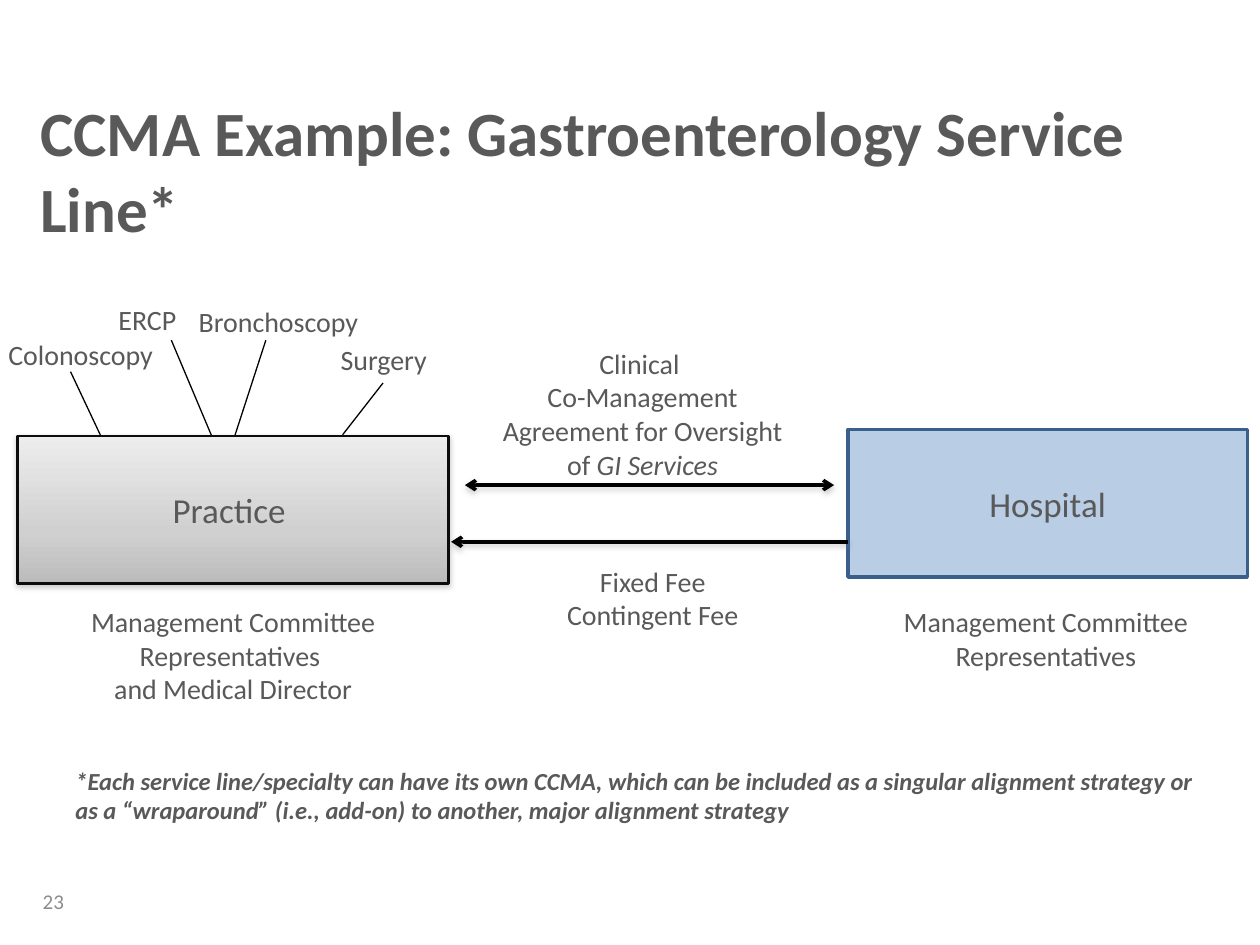
from copy import deepcopy

from lxml import etree
from pptx import Presentation
from pptx.dml.color import RGBColor
from pptx.enum.shapes import MSO_CONNECTOR, MSO_SHAPE
from pptx.enum.text import MSO_ANCHOR, MSO_AUTO_SIZE, PP_ALIGN
from pptx.oxml.ns import qn
from pptx.util import Inches, Pt

LEFT, CENTER = PP_ALIGN.LEFT, PP_ALIGN.CENTER
TOP, MIDDLE = MSO_ANCHOR.TOP, MSO_ANCHOR.MIDDLE
RECTANGLE = MSO_SHAPE.RECTANGLE
STRAIGHT = MSO_CONNECTOR.STRAIGHT
NO_AUTOFIT = MSO_AUTO_SIZE.NONE

FONT = "Calibri"
TEXT_GRAY = "595959"
BLACK = "000000"

# Service: label box (left, top, width), line start, line end
SERVICES = {
    "Colonoscopy": ((-0.2, 2.63, 1.68), (0.56, 2.95), (0.8, 3.46)),
    "ERCP": ((0.38, 2.35, 1.58), (1.36, 2.7), (1.68, 3.46)),
    "Bronchoscopy": ((1.42, 2.37, 1.58), (2.11, 2.7), (1.85, 3.5)),
    "Surgery": ((2.17, 2.67, 1.75), (3.04, 3.04), (2.72, 3.45)),
}


def rgb(hex_color):
    return RGBColor.from_string(hex_color)


def write_text(frame, paragraphs, size=16, color=TEXT_GRAY, align=CENTER,
               anchor=TOP, bold=False, italic=False):
    """Fill a frame; each paragraph is a string or a list of (text, italic) runs."""
    frame.word_wrap = True
    frame.auto_size = NO_AUTOFIT
    frame.vertical_anchor = anchor
    for index, content in enumerate(paragraphs):
        paragraph = frame.paragraphs[0] if index == 0 else frame.add_paragraph()
        paragraph.alignment = align
        runs = [(content, italic)] if isinstance(content, str) else content
        for words, slanted in runs:
            run = paragraph.add_run()
            run.text = words
            run.font.name = FONT
            run.font.size = Pt(size)
            run.font.bold = bold
            run.font.italic = slanted
            run.font.color.rgb = rgb(color)


def add_text(slide, box, *paragraphs, **text_format):
    label = slide.shapes.add_textbox(*map(Inches, box))
    write_text(label.text_frame, paragraphs, **text_format)


def set_effects(shape, shadow):
    """Replace the theme shadow with a soft downward one, or with none."""
    properties = shape._element.spPr
    for old in properties.findall(qn("a:effectLst")):
        properties.remove(old)
    effects = etree.SubElement(properties, qn("a:effectLst"))
    if shadow:
        outer = etree.SubElement(effects, qn("a:outerShdw"), blurRad=str(Pt(3.1)),
                                 dist=str(Pt(1.6)), dir="5400000", rotWithShape="0")
        tint = etree.SubElement(outer, qn("a:srgbClr"), val="808080")
        etree.SubElement(tint, qn("a:alpha"), val="38000")


def add_line(slide, start, end, width=0.75, arrows=(), shadow=False):
    """Draw a line; arrows may hold headEnd (at start) and tailEnd (at end)."""
    line = slide.shapes.add_connector(STRAIGHT, *map(Inches, (*start, *end)))
    line.line.color.rgb = rgb(BLACK)
    line.line.width = Pt(width)
    for arrow in arrows:
        etree.SubElement(line.line._get_or_add_ln(), qn(f"a:{arrow}"), type="arrow")
    set_effects(line, shadow)


def fill_gradient(shape, colors):
    """Fill top to bottom with three colours, the middle one at 65 %."""
    fill = shape.fill
    fill.gradient()
    fill.gradient_angle = 270
    first = fill.gradient_stops[0]._gs
    first.addnext(deepcopy(first))
    for stop, position, color in zip(fill.gradient_stops, (0, 0.65, 1), colors):
        stop.position = position
        stop.color.rgb = rgb(color)


def add_party(slide, name, box, fill, line_color, line_width, shadow=False):
    party = slide.shapes.add_shape(RECTANGLE, *map(Inches, box))
    if isinstance(fill, str):
        party.fill.solid()
        party.fill.fore_color.rgb = rgb(fill)
    else:
        fill_gradient(party, fill)
    party.line.color.rgb = rgb(line_color)
    party.line.width = Pt(line_width)
    set_effects(party, shadow)
    write_text(party.text_frame, [name], size=20, anchor=MIDDLE)


def add_title(slide, words):
    title = slide.shapes.title
    title.left, title.top = Inches(0.22), Inches(0.8)
    title.width, title.height = Inches(9.53), Inches(1.09)
    write_text(title.text_frame, [words], size=36, bold=True, align=LEFT, anchor=MIDDLE)


def main():
    deck = Presentation()
    deck.slide_width, deck.slide_height = Inches(10), Inches(7.5)
    slide = deck.slides.add_slide(deck.slide_layouts[5])

    add_title(slide, "CCMA Example: Gastroenterology Service Line*")

    for service, (box, start, end) in SERVICES.items():
        add_line(slide, start, end)
        add_text(slide, (*box, 0.37), service)

    add_party(slide, "Practice ", (0.14, 3.46, 3.42, 1.17),
              ("EDEDED", "D0D0D0", "BCBCBC"), "0D0D0D", 1.5, shadow=True)
    add_party(slide, "Hospital", (6.73, 3.41, 3.17, 1.17), "B9CDE5", "3A5F8C", 2)
    add_text(slide, (0.14, 4.75, 3.42, 0.91),
             "Management Committee Representatives ", "and Medical Director")
    add_text(slide, (6.59, 4.75, 3.42, 0.64), "Management Committee Representatives")

    add_text(slide, (3.81, 2.7, 2.58, 1.18), "Clinical ",
             [("Co-Management Agreement for Oversight of ", False), ("GI Services", True)])
    add_line(slide, (3.69, 3.85), (6.62, 3.85), 2, ("headEnd", "tailEnd"), shadow=True)
    add_line(slide, (6.73, 4.3), (3.58, 4.3), 2, ("tailEnd",), shadow=True)
    add_text(slide, (3.89, 4.43, 2.58, 0.64), "Fixed Fee", "Contingent Fee")

    add_text(slide, (0.5, 6.03, 9.26, 0.57),
             "*Each service line/specialty can have its own CCMA, which can be included "
             "as a singular alignment strategy or as a “wraparound” (i.e., add-on) to "
             "another, major alignment strategy",
             size=14, align=LEFT, bold=True, italic=True)
    add_text(slide, (0.24, 6.95, 1.98, 0.4), "23", size=12, color="8C8C8C",
             align=LEFT, anchor=MIDDLE)

    deck.save("out.pptx")


if __name__ == "__main__":
    main()
